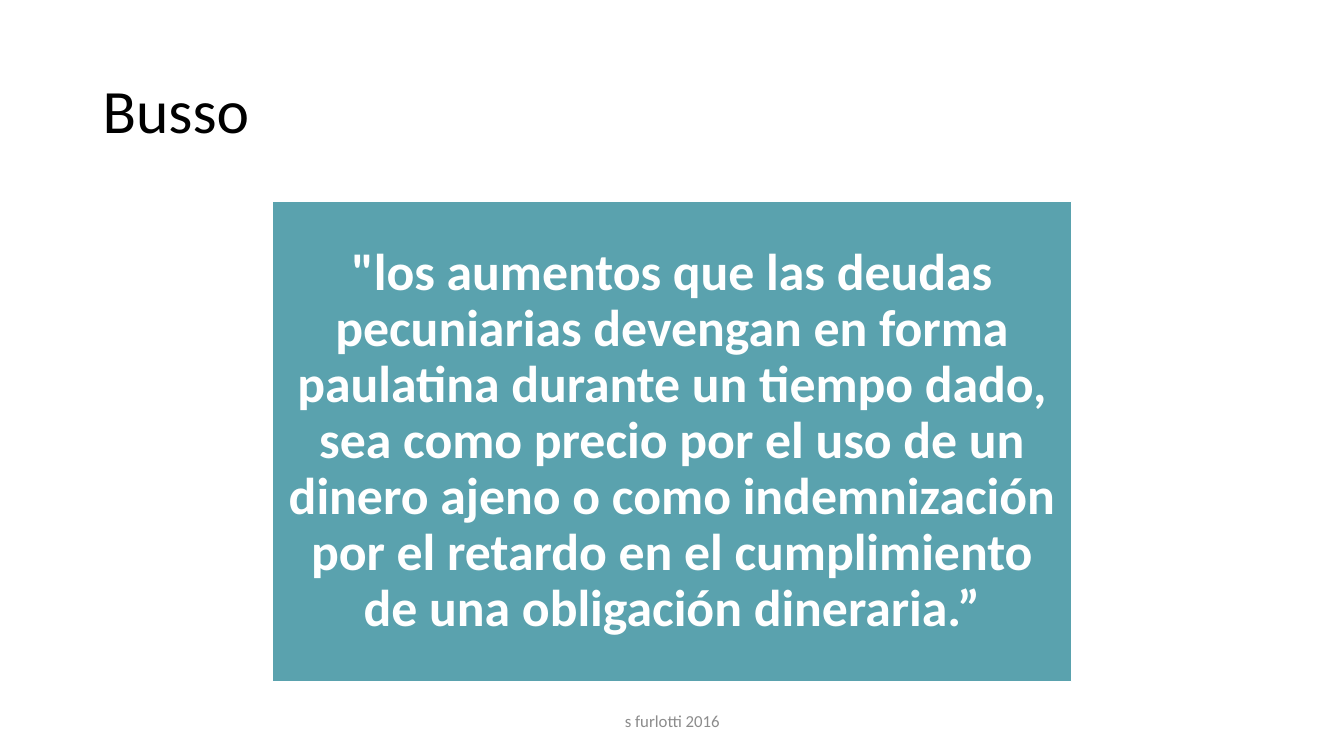
from pptx import Presentation
from pptx import util as u
from pptx.dml.color import RGBColor
from pptx.enum import shapes, text

COLOURS = {"title": "000000", "panel": "5AA2AE", "light": "FFFFFF", "footer": "8C8C8C"}
WIDTH, HEIGHT = u.Inches(13.33), u.Inches(7.5)
QUOTE = (
    '"los aumentos que las deudas pecuniarias devengan en forma paulatina '
    "durante un tiempo dado, sea como precio por el uso de un dinero ajeno "
    "o como indemnización por el retardo en el cumplimiento de una "
    "obligación dineraria.”"
)


class SlideBuilder:
    """Holds the style and the slide; boxes are given as percentages of the slide."""

    font_name = "Calibri"

    def __init__(self, slide):
        self.slide = slide

    def box(self, left, top, width, height):
        return [int(share * side / 100) for share, side in
                ((left, WIDTH), (top, HEIGHT), (width, WIDTH), (height, HEIGHT))]

    def colour(self, name):
        return RGBColor.from_string(COLOURS[name])

    def set_text(self, shape, words, size, colour, centred=True, bold=False, spacing=1.0):
        frame = shape.text_frame
        frame.word_wrap = True
        frame.vertical_anchor = text.MSO_ANCHOR.MIDDLE
        paragraph = frame.paragraphs[0]
        paragraph.text = words
        paragraph.alignment = text.PP_ALIGN.CENTER if centred else text.PP_ALIGN.LEFT
        paragraph.line_spacing = spacing
        font = paragraph.font
        font.name, font.size, font.bold = self.font_name, u.Pt(size), bold
        font.color.rgb = self.colour(colour)

    def label(self, box, words, size, colour, **style):
        shape = self.slide.shapes.add_textbox(*self.box(*box))
        self.set_text(shape, words, size, colour, **style)

    def panel(self, box, words, size, fill, colour, inset, **style):
        shape = self.slide.shapes.add_shape(shapes.MSO_SHAPE.RECTANGLE, *self.box(*box))
        shape.shadow.inherit = False
        shape.fill.solid()
        shape.fill.fore_color.rgb = self.colour(fill)
        shape.line.color.rgb = self.colour(colour)
        shape.line.width = u.Pt(1)
        frame = shape.text_frame
        frame.margin_left = frame.margin_right = u.Inches(inset)
        frame.margin_top = frame.margin_bottom = u.Inches(inset)
        self.set_text(shape, words, size, colour, **style)


def main():
    presentation = Presentation()
    presentation.slide_width, presentation.slide_height = WIDTH, HEIGHT
    builder = SlideBuilder(presentation.slides.add_slide(presentation.slide_layouts[6]))

    # Title
    builder.label((6.9, 5.33, 86.25, 19.33), "Busso", 44, "title",
                  centred=False, spacing=0.9)
    # Quotation
    builder.panel((20.25, 26.67, 59.5, 63.47), QUOTE, 37, "panel", "light",
                  inset=0.15, bold=True, spacing=0.9)
    # Footer
    builder.label((33.15, 92.67, 33.75, 5.33), "s furlotti 2016", 12, "footer")

    presentation.save("out.pptx")


if __name__ == "__main__":
    main()
